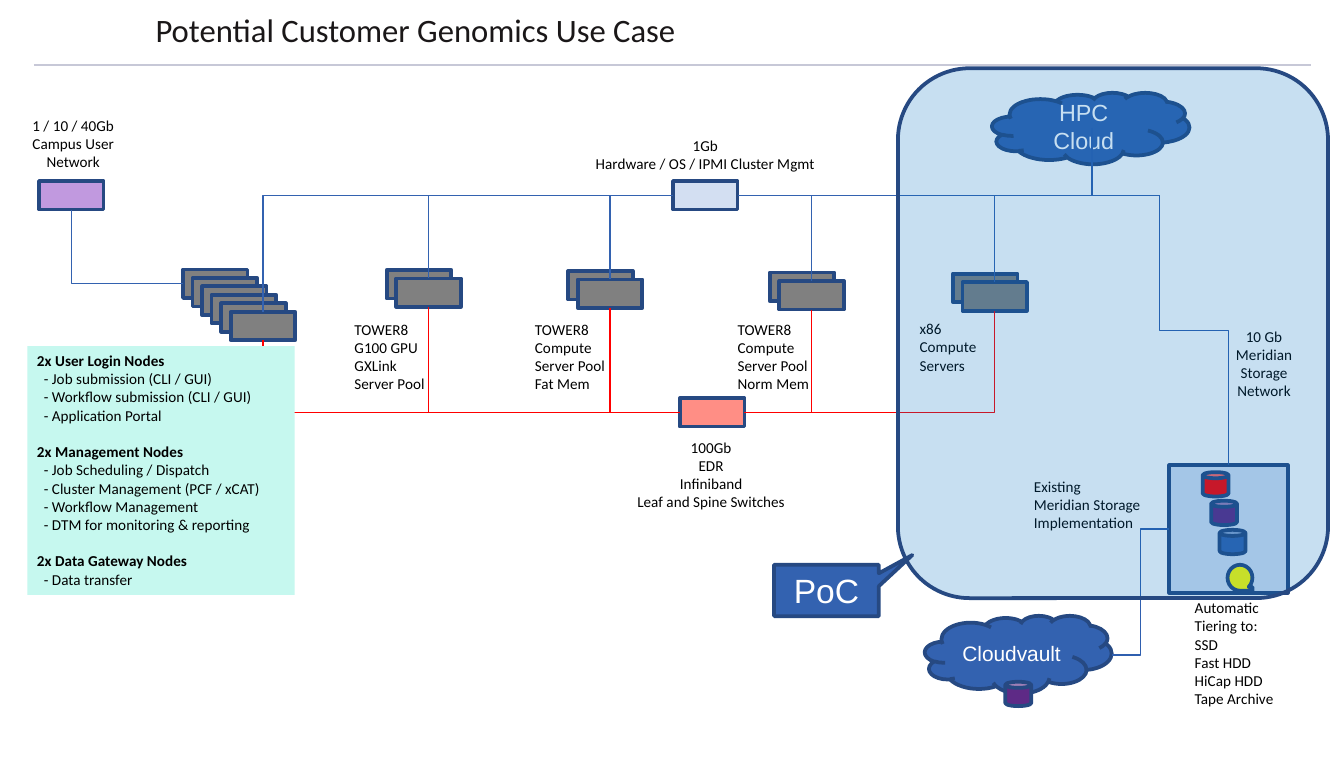
from lxml import etree
from pptx import Presentation
from pptx.dml.color import RGBColor
from pptx.enum import shapes, text
from pptx.oxml.ns import qn
from pptx.util import Cm, Pt

NAVY, BLUE, LINK, RED = "264982", "3362B0", "2F5FAF", "FF0000"
GRAY, PALE, PURPLE = "808080", "D3DFF2", "5E2A86"
BOX_W, BOX_H = 1.22, 0.54
KIND = shapes.MSO_SHAPE
LEFT, CENTER = text.PP_ALIGN.LEFT, text.PP_ALIGN.CENTER

prs = Presentation()
prs.slide_width, prs.slide_height = Cm(25.4), Cm(14.3)
slide = prs.slides.add_slide(prs.slide_layouts[5])


def draw(kind, x, y, w, h, fill, line=NAVY):
    shape = slide.shapes.add_shape(kind, Cm(x), Cm(y), Cm(w), Cm(h))
    shape.shadow.inherit = False
    shape.fill.solid()
    shape.fill.fore_color.rgb = RGBColor.from_string(fill)
    if line:
        shape.line.color.rgb = RGBColor.from_string(line)
        shape.line.width = Pt(2)
    else:
        shape.line.fill.background()
    return shape


def write(shape, paragraphs, size=8.1, font="Calibri", color="000000", align=CENTER,
          anchor=text.MSO_ANCHOR.TOP, wrap=False):
    """Fill a shape; dashed paragraphs are indented and the headings above them bold."""
    frame = shape.text_frame
    frame.word_wrap = wrap
    frame.auto_size = text.MSO_AUTO_SIZE.NONE
    frame.vertical_anchor = anchor
    frame.margin_left = frame.margin_right = Cm(0.18)
    frame.margin_top = frame.margin_bottom = Cm(0.1)
    has_items = any(content.startswith("-") for content in paragraphs)
    for i, content in enumerate(paragraphs):
        paragraph = frame.paragraphs[0] if i == 0 else frame.add_paragraph()
        paragraph.alignment = align
        if content.startswith("-"):
            paragraph._p.get_or_add_pPr().set("marL", str(Cm(0.13)))
        elif has_items and i > 0:
            paragraph.space_before = Pt(9.9)
        for j, line in enumerate(content.split("\n")):
            if j > 0:
                paragraph.add_line_break()
            run = paragraph.add_run()
            run.text = line
            run.font.size, run.font.name = Pt(size), font
            run.font.bold = has_items and not content.startswith("-")
            run.font.color.rgb = RGBColor.from_string(color)


# Title
title = slide.shapes.title
title.left, title.top, title.width, title.height = Cm(2.69), Cm(0.08), Cm(10.34), Cm(0.94)
write(title, ["Potential Customer Genomics Use Case"], 17.5, color="1A1718")

# Servers, each a stack whose front box comes last
storage = draw(KIND.RECTANGLE, 22.1, 8.79, 2.24, 2.41, PALE)
stacks = []
for x, y, count in [(4.36, 5.89, 6), (7.49, 5.26, 2), (10.92, 5.28, 2),
                    (14.73, 5.31, 2), (18.19, 5.33, 2)]:
    stacks.append([draw(KIND.RECTANGLE, x - 0.18 * i, y - 0.16 * i, BOX_W, BOX_H, GRAY)
                   for i in reversed(range(count))])

# Switches
infiniband = draw(KIND.RECTANGLE, 12.85, 7.52, BOX_W, BOX_H, "FF8E85")
management = draw(KIND.RECTANGLE, 12.72, 3.42, BOX_W, BOX_H, PALE)
campus = draw(KIND.RECTANGLE, 0.74, 3.42, BOX_W, BOX_H, "C199DF")

# Storage tiers and clouds
for x, y, color in [(22.73, 8.92, RED), (22.89, 9.46, PURPLE), (23.05, 10.01, BLUE)]:
    draw(KIND.CAN, x, y, 0.49, 0.46, color)
draw(KIND.FLOWCHART_SEQUENTIAL_ACCESS_STORAGE, 23.2, 10.67, 0.47, 0.49, "FFFF00")

object_cloud = draw(KIND.CLOUD, 17.48, 11.63, 3.53, 1.47, BLUE)
write(object_cloud, ["Cloudvault"], 11.2, "Arial", "FFFFFF",
      anchor=text.MSO_ANCHOR.MIDDLE, wrap=True)
draw(KIND.CAN, 19, 12.88, 0.49, 0.46, PURPLE)
hpc_cloud = draw(KIND.CLOUD, 18.75, 1.75, 3.73, 1.35, BLUE)
write(hpc_cloud, ["HPC Cloud"], 12.5, "Arial", "FFFFFF",
      anchor=text.MSO_ANCHOR.MIDDLE, wrap=True)

# Labels
for x, y, w, h, align, paragraphs in [
    (6.52, 5.95, 1.73, 1.57, LEFT, ["TOWER8", "G100 GPU", "GXLink", "Server Pool"]),
    (9.93, 5.95, 1.73, 1.57, LEFT, ["TOWER8", "Compute", "Server Pool", "Fat Mem"]),
    (13.76, 5.95, 1.75, 1.57, LEFT, ["TOWER8", "Compute", "Server Pool", "Norm Mem"]),
    (17.2, 5.94, 1.47, 1.24, LEFT, ["x86", "Compute", "Servers"]),
    (11.84, 8.18, 3.2, 1.57, CENTER, ["100Gb\nEDR\nInfiniband\nLeaf and Spine Switches"]),
    (10.56, 2.48, 5.54, 0.89, CENTER, ["1Gb\nHardware / OS / IPMI Cluster Mgmt"]),
    (0.38, 2.09, 2.01, 1.24, CENTER, ["1 / 10 / 40Gb\nCampus User\nNetwork"]),
    (22.4, 11.21, 1.91, 2.29, LEFT, ["Automatic\nTiering to:", "SSD\nFast HDD",
                                     "HiCap HDD", "Tape Archive"]),
    (19.36, 8.91, 2.49, 1.24, LEFT, ["Existing", "Meridian Storage", "Implementation"]),
    (23.13, 6.08, 1.52, 1.57, CENTER, ["10 Gb\nMeridian\nStorage\nNetwork"]),
]:
    label = slide.shapes.add_textbox(Cm(x), Cm(y), Cm(w), Cm(h))
    write(label, paragraphs, align=align)

# Straight lines: title rule, management bus, drop from the HPC cloud
STRAIGHT, ELBOW = shapes.MSO_CONNECTOR.STRAIGHT, shapes.MSO_CONNECTOR.ELBOW
links = []
for x1, y1, x2, y2, color in [(0.64, 1.23, 24.77, 1.23, "C7C8D7"),
                              (13.94, 3.69, 21.92, 3.69, BLUE),
                              (20.64, 2.41, 20.64, 3.69, LINK)]:
    links.append((slide.shapes.add_connector(STRAIGHT, Cm(x1), Cm(y1), Cm(x2), Cm(y2)), color))

# One-bend links; connection sites run top, left, bottom, right
TOP_SITE, LEFT_SITE, BOTTOM_SITE, RIGHT_SITE = range(4)
bends = [(stacks[0][0], LEFT_SITE, campus, BOTTOM_SITE, BLUE)]
for i, stack in enumerate(stacks):
    side = LEFT_SITE if i < 3 else RIGHT_SITE
    bends.append((infiniband, side, stack[-1], BOTTOM_SITE, RED))
    bends.append((management, side, stack[-1], TOP_SITE, BLUE))
for start, start_site, end, end_site, color in bends:
    link = slide.shapes.add_connector(ELBOW, 0, 0, 0, 0)
    link.begin_connect(start, start_site)
    link.end_connect(end, end_site)
    link._element.spPr.find(qn("a:prstGeom")).set("prst", "bentConnector2")
    links.append((link, color))

# Two-bend links to the storage
bus_to_storage = slide.shapes.add_connector(ELBOW, Cm(21.92), Cm(3.69), Cm(23.22), Cm(8.79))
bus_to_storage.end_connect(storage, TOP_SITE)
bus_to_storage.left, bus_to_storage.top = Cm(20.02), Cm(5.59)
bus_to_storage.width, bus_to_storage.height = Cm(5.1), Cm(1.3)
turn = bus_to_storage._element.spPr.find(qn("a:xfrm"))
turn.set("rot", str(270 * 60000))
turn.set("flipH", "1")

storage_to_cloud = slide.shapes.add_connector(ELBOW, Cm(22.1), Cm(10), Cm(21.01), Cm(12.37))
storage_to_cloud.begin_connect(storage, LEFT_SITE)
storage_to_cloud.end_connect(object_cloud, 0)
storage_to_cloud.end_x, storage_to_cloud.end_y = Cm(21.01), Cm(12.37)
links += [(bus_to_storage, LINK), (storage_to_cloud, LINK)]

for link, color in links:
    link.line.color.rgb = RGBColor.from_string(color)
    link.line.width = Pt(0.75)
    etree.SubElement(link._element.spPr, qn("a:effectLst"))

# Node roles
roles = draw(KIND.RECTANGLE, 0.52, 6.54, 5.05, 4.7, "C6F8EF", None)
write(roles, [
    "2x User Login Nodes",
    "- Job submission (CLI / GUI)",
    "- Workflow submission (CLI / GUI)",
    "- Application Portal",
    "2x Management Nodes",
    "- Job Scheduling / Dispatch",
    "- Cluster Management (PCF / xCAT)",
    "- Workflow Management",
    "- DTM for monitoring & reporting",
    "2x Data Gateway Nodes",
    "- Data transfer",
], align=LEFT, wrap=True)

# Proof-of-concept area and its callout
area = draw(KIND.ROUNDED_RECTANGLE, 16.97, 1.29, 8.13, 10.01, "0070C0")
area_color = area._element.spPr.find(qn("a:solidFill"))[0]
etree.SubElement(area_color, qn("a:alpha"), val="22000")
callout = draw(KIND.RECTANGULAR_CALLOUT, 14.63, 10.67, 1.98, 0.97, BLUE)
callout.adjustments[0], callout.adjustments[1] = 0.82, -0.69
write(callout, ["PoC"], 18, "Arial", "FFFFFF", anchor=text.MSO_ANCHOR.MIDDLE)

prs.save("out.pptx")
